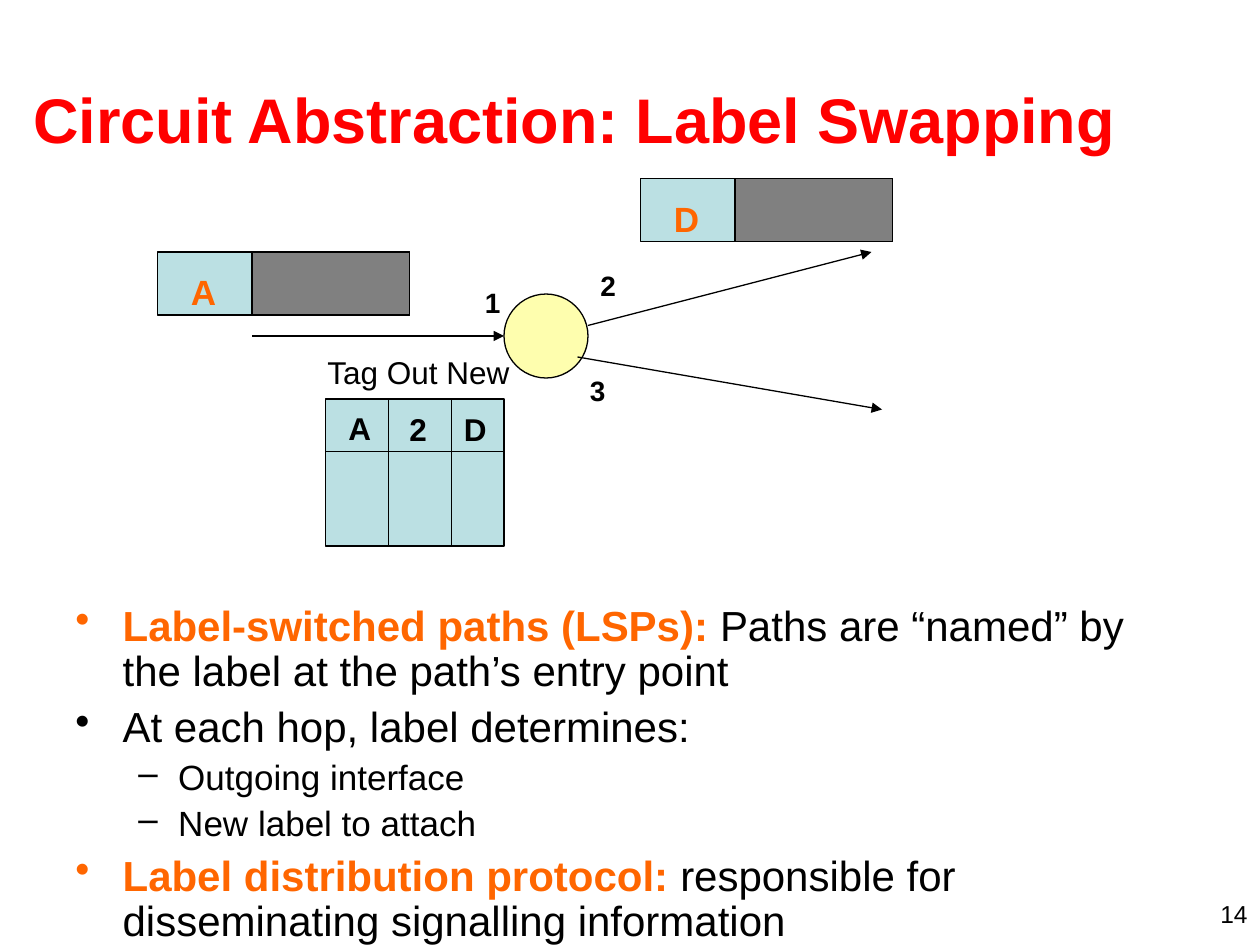
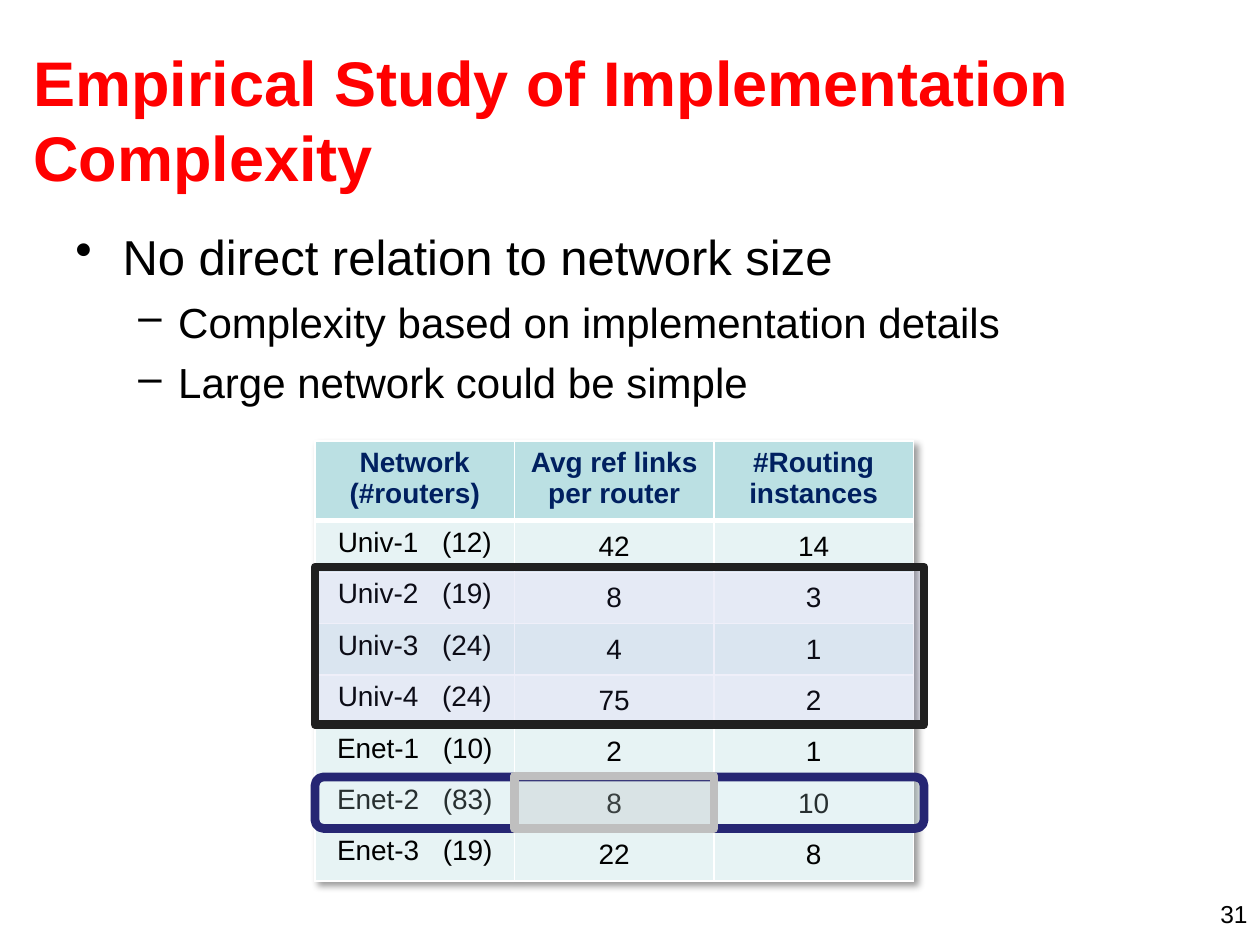
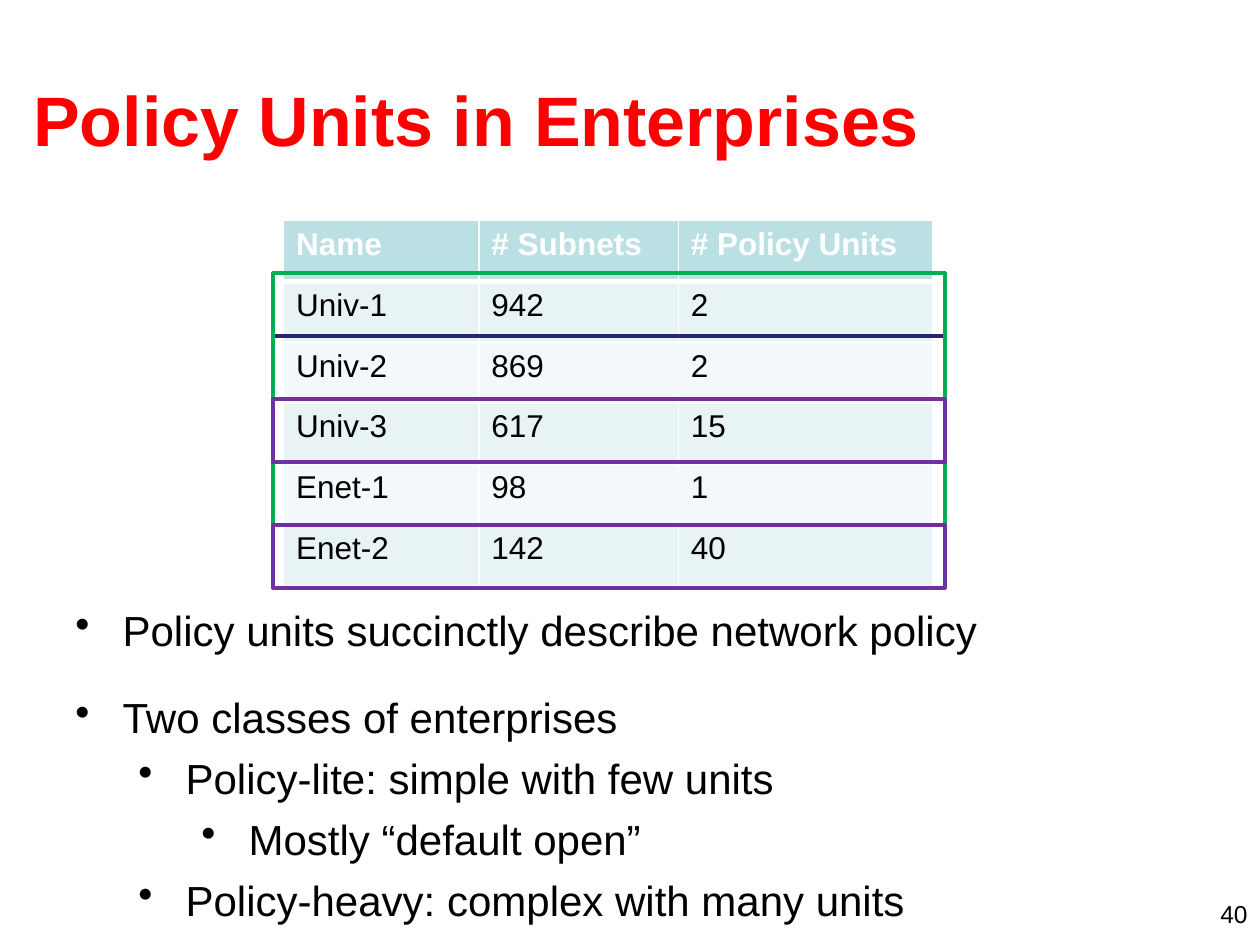
from lxml.etree import SubElement
from pptx import Presentation
from pptx.dml.color import RGBColor
from pptx.enum.shapes import MSO_CONNECTOR, MSO_SHAPE
from pptx.enum.text import MSO_ANCHOR, PP_ALIGN
from pptx.oxml import parse_xml
from pptx.oxml.ns import nsdecls, qn
from pptx.util import Emu, Pt

PX_PER_INCH = 120
FONT = "Arial"
BLACK = RGBColor(0, 0, 0)
WHITE = RGBColor(255, 255, 255)
RED = RGBColor(255, 0, 0)
ORANGE = RGBColor(0xFF, 0x66, 0x00)
TEAL = RGBColor(0xBB, 0xE0, 0xE3)
BAND_DARK = RGBColor(0xE7, 0xF3, 0xF4)
BAND_LIGHT = RGBColor(0xF3, 0xF9, 0xFA)
GREY = RGBColor(0x80, 0x80, 0x80)
YELLOW = RGBColor(0xFE, 0xFE, 0xAE)
NAVY = RGBColor(0x26, 0x26, 0x73)
HEADER_BLUE = RGBColor(0x00, 0x20, 0x60)
CHARCOAL = RGBColor(0x20, 0x20, 0x20)
LAVENDER = RGBColor(0x75, 0x75, 0xD1)
SILVER = RGBColor(0xBF, 0xBF, 0xBF)
MID_GREY = RGBColor(0x99, 0x99, 0x99)
GREEN = RGBColor(0x00, 0xB0, 0x50)
PURPLE = RGBColor(0x70, 0x30, 0xA0)

TITLE_BOX = (20, 38, 1150, 150)
NUMBER_BOX = (920, 850, 280, 30)
DASH_LEVELS = [(45, 45, "•"), (98, 38, "–")]
DOT_LEVELS = [(45, 45, "•"), (105, 45, "•"), (165, 45, "•")]
TABLE_SHADOW = (
    f'<a:effectLst {nsdecls("a")}><a:outerShdw blurRad="50800" dist="38100" '
    'dir="2700000" algn="tl"><a:srgbClr val="000000"><a:alpha val="40000"/>'
    '</a:srgbClr></a:outerShdw></a:effectLst>'
)


def px(length):
    return Emu(round(length * 914400 / PX_PER_INCH))


def write(paragraph, text, size=18, color=BLACK, bold=False, align=None, tracking=0):
    if align is not None:
        paragraph.alignment = align
    run = paragraph.add_run()
    run.text = text
    run.font.name = FONT
    run.font.size = Pt(size)
    run.font.bold = bold
    run.font.color.rgb = color
    if tracking:
        run._r.get_or_add_rPr().set("spc", str(tracking * 100))


def text_frame(slide, box, anchor=MSO_ANCHOR.TOP):
    frame = slide.shapes.add_textbox(*map(px, box)).text_frame
    frame.word_wrap = True
    frame.vertical_anchor = anchor
    return frame


def label(slide, box, text, anchor=MSO_ANCHOR.TOP, **style):
    write(text_frame(slide, box, anchor).paragraphs[0], text, **style)


def outline(slide, box, line, width=0.75, fill=None, opacity=None, kind=MSO_SHAPE.RECTANGLE):
    shape = slide.shapes.add_shape(kind, *map(px, box))
    shape.shadow.inherit = False
    shape.line.color.rgb = line
    shape.line.width = Pt(width)
    if fill is None:
        shape.fill.background()
        return
    shape.fill.solid()
    shape.fill.fore_color.rgb = fill
    if opacity is not None:
        color = shape._element.spPr.find(qn("a:solidFill"))[0]
        SubElement(color, qn("a:alpha"), val=str(opacity * 1000))


def link(slide, start, end, arrow=False):
    connector = slide.shapes.add_connector(MSO_CONNECTOR.STRAIGHT, *map(px, start + end))
    connector.line.color.rgb = BLACK
    connector.line.width = Pt(0.75)
    if arrow:
        SubElement(connector.line._get_or_add_ln(), qn("a:tailEnd"), type="triangle")
    SubElement(connector._element.spPr, qn("a:effectLst"))


def bullets(slide, box, items, levels, line_spacing=None):
    frame = text_frame(slide, box)
    for index, (level, size, lead, rest, gap) in enumerate(items):
        paragraph = frame.add_paragraph() if index else frame.paragraphs[0]
        margin, hanging, mark = levels[level]
        paragraph.level = level
        paragraph.line_spacing = line_spacing
        paragraph.space_before = Pt(size / 4 + gap)
        properties = paragraph._p.get_or_add_pPr()
        properties.set("marL", str(px(margin)))
        properties.set("indent", str(-px(hanging)))
        SubElement(properties, qn("a:buChar"), char=mark)
        if lead:
            write(paragraph, lead, size=size, color=ORANGE, bold=True)
        if rest:
            write(paragraph, rest, size=size)


def cell_borders(cell, row):
    properties = cell._tc.get_or_add_tcPr()
    widths = {"lnL": 1, "lnR": 1, "lnT": 3 if row == 1 else 1, "lnB": 3 if row == 0 else 1}
    for position, (side, width) in enumerate(widths.items()):
        properties.insert(position, parse_xml(
            f'<a:{side} {nsdecls("a")} w="{Pt(width)}"><a:solidFill>'
            f'<a:srgbClr val="{WHITE}"/></a:solidFill></a:{side}>'))


def data_table(slide, origin, columns, heights, rows, size, header_color, align, value_anchor):
    frame = slide.shapes.add_table(
        len(rows), len(columns), *map(px, (*origin, sum(columns), sum(heights))))
    table = frame.table
    for column, width in zip(table.columns, columns):
        column.width = px(width)
    for r, values in enumerate(rows):
        table.rows[r].height = px(heights[r])
        for c, value in enumerate(values):
            cell = table.cell(r, c)
            cell.fill.solid()
            cell.fill.fore_color.rgb = TEAL if r == 0 else (BAND_LIGHT, BAND_DARK)[r % 2]
            cell.vertical_anchor = value_anchor if r and c else MSO_ANCHOR.TOP
            cell_borders(cell, r)
            style = dict(size=size, align=align, bold=r == 0,
                         color=header_color if r == 0 else BLACK)
            paragraph = cell.text_frame.paragraphs[0]
            if isinstance(value, tuple):
                network, routers = value
                write(paragraph, network, **style)
                write(paragraph, " ", tracking=9, **style)
                write(paragraph, f"({routers})", **style)
            else:
                write(paragraph, value, **style)
    return table


def new_slide(deck, title, number, title_size=36):
    slide = deck.slides.add_slide(deck.slide_layouts[6])
    label(slide, TITLE_BOX, title, anchor=MSO_ANCHOR.MIDDLE,
          size=title_size, color=RED, bold=True)
    label(slide, NUMBER_BOX, str(number), size=14, align=PP_ALIGN.RIGHT)
    return slide


def packet(slide, x, y, tag):
    outline(slide, (x, y, 240, 60), BLACK, fill=TEAL)
    outline(slide, (x + 90, y, 150, 60), BLACK, fill=GREY)
    label(slide, (x + 20, y + 12, 50, 52), tag, size=20, color=ORANGE, bold=True)


def router(slide, x, y):
    outline(slide, (x, y, 80, 80), BLACK, fill=YELLOW, kind=MSO_SHAPE.OVAL)
    link(slide, (x - 240, y + 40), (x, y + 40), arrow=True)
    link(slide, (x + 80, y + 30), (x + 350, y - 40), arrow=True)
    link(slide, (x + 70, y + 60), (x + 360, y + 110), arrow=True)
    for port, dx, dy in (("1", -30, -14), ("2", 80, -30), ("3", 70, 70)):
        label(slide, (x + dx, y + dy, 50, 44), port, size=16, bold=True)


def swap_table(slide, x, y, w, h):
    outline(slide, (x, y, w, h), BLACK, fill=TEAL)
    for dx in (60, 120):
        link(slide, (x + dx, y), (x + dx, y + h))
    link(slide, (x, y + 50), (x + w, y + 50))
    for entry, dx, dy in (("A", 10, 4), ("2", 68, 5), ("D", 120, 5)):
        label(slide, (x + dx, y + dy, 50, 48), entry, bold=True)
    label(slide, (x - 10, y - 50, 280, 48), "Tag Out New")


def label_swapping(deck):
    slide = new_slide(deck, "Circuit Abstraction: Label Swapping", 14)
    bullets(slide, (60, 570, 1070, 340), [
        (0, 24, "Label-switched paths (LSPs):",
         " Paths are “named” by the label at the path’s entry point", 0),
        (0, 24, "", "At each hop, label determines:", 0),
        (1, 20, "", "Outgoing interface", 0),
        (1, 20, "", "New label to attach", 0),
        (0, 24, "Label distribution protocol: ",
         "responsible for disseminating signalling information", 0),
    ], DASH_LEVELS, line_spacing=0.9)
    router(slide, 480, 280)
    packet(slide, 150, 240, "A")
    swap_table(slide, 310, 380, 170, 140)
    packet(slide, 610, 170, "D")


def implementation_complexity(deck):
    slide = new_slide(deck, "Empirical Study of Implementation Complexity", 31)
    table = data_table(slide, (300, 420), [190] * 3, [70] + [49] * 7, [
        ("Network (#routers)", "Avg ref links per router", "#Routing instances"),
        (("Univ-1", 12), "42", "14"),
        (("Univ-2", 19), "8", "3"),
        (("Univ-3", 24), "4", "1"),
        (("Univ-4", 24), "75", "2"),
        (("Enet-1", 10), "2", "1"),
        (("Enet-2", 83), "8", "10"),
        (("Enet-3", 19), "22", "8"),
    ], 16, HEADER_BLUE, PP_ALIGN.CENTER, MSO_ANCHOR.MIDDLE)
    table._tbl.tblPr.insert(0, parse_xml(TABLE_SHADOW))
    outline(slide, (300, 740, 580, 49), NAVY, 5, TEAL, 21, MSO_SHAPE.ROUNDED_RECTANGLE)
    outline(slide, (300, 540, 580, 150), CHARCOAL, 5, LAVENDER, 11)
    outline(slide, (490, 739, 190, 50), SILVER, 5, MID_GREY, 17)
    bullets(slide, (60, 210, 1080, 230), [
        (0, 28, "", "No direct relation to network size", 0),
        (1, 24, "", "Complexity based on implementation details", 0),
        (1, 24, "", "Large network could be simple", 0),
    ], DASH_LEVELS)


def policy_units(deck):
    slide = new_slide(deck, "Policy Units in Enterprises", 40, title_size=40)
    data_table(slide, (270, 210), [186, 190, 242], [58] * 6, [
        ("Name", "# Subnets", "# Policy Units"),
        ("Univ-1", "942", "2"),
        ("Univ-2", "869", "2"),
        ("Univ-3", "617", "15"),
        ("Enet-1", "98", "1"),
        ("Enet-2", "142", "40"),
    ], 18, WHITE, PP_ALIGN.LEFT, MSO_ANCHOR.TOP)
    bullets(slide, (60, 570, 1080, 280), [
        (0, 24, "", "Policy units succinctly describe network policy", 0),
        (0, 24, "", "Two classes of enterprises", 15),
        (1, 24, "", "Policy-lite: simple with few units", 0),
        (2, 24, "", "Mostly “default open”", 0),
        (1, 24, "", "Policy-heavy: complex with many units", 0),
    ], DOT_LEVELS)
    for first_row, row_count, color in (
            (0, 1, NAVY), (0, 2, GREEN), (3, 1, GREEN), (4, 1, PURPLE), (2, 1, PURPLE)):
        outline(slide, (260, 260 + 60 * first_row, 640, 60 * row_count), color, 2)


def main():
    deck = Presentation()
    deck.slide_width, deck.slide_height = px(1200), px(900)
    label_swapping(deck)
    implementation_complexity(deck)
    policy_units(deck)
    deck.save("out.pptx")


if __name__ == "__main__":
    main()
